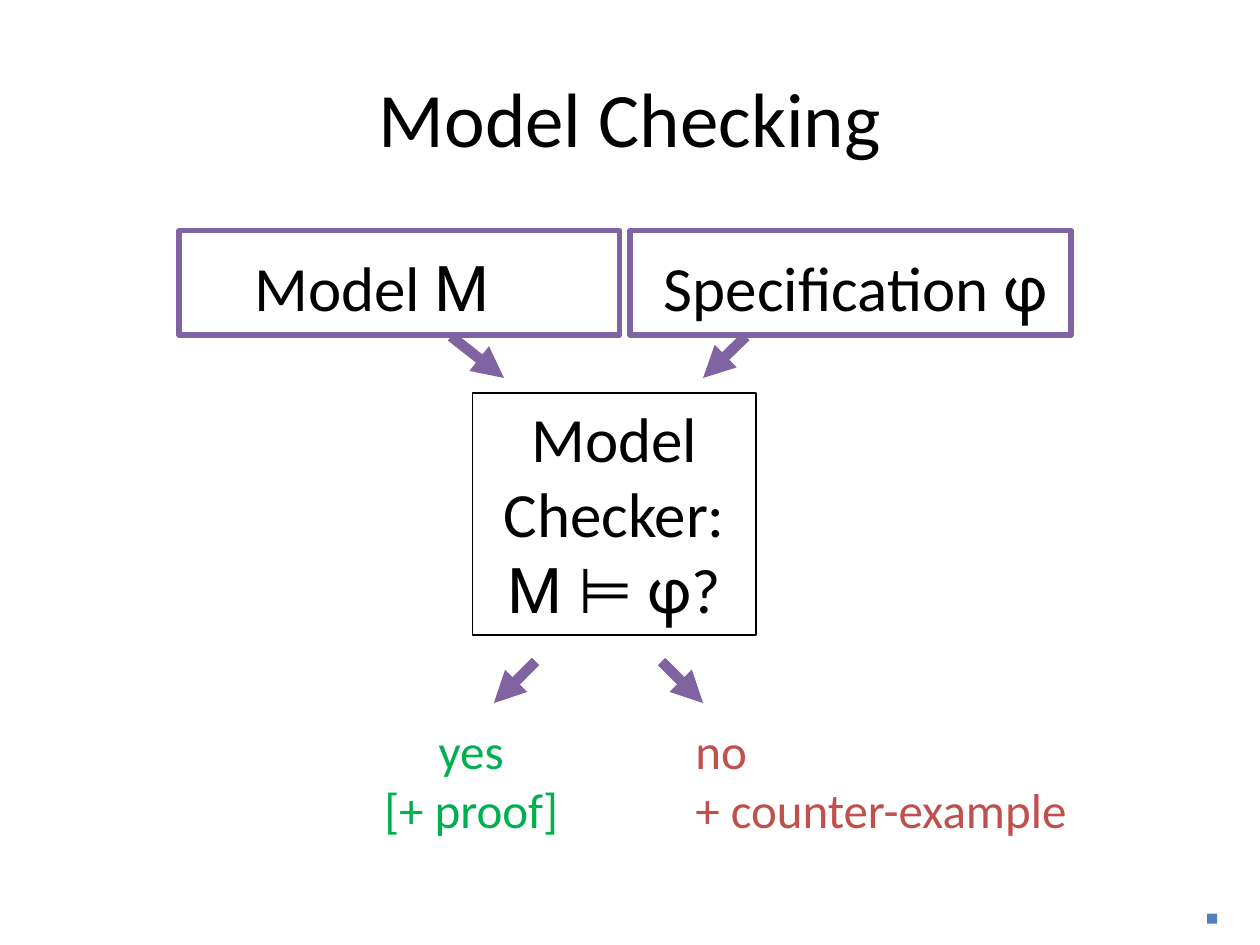
import pptx
import pptx.util
import pptx.oxml
import pptx.oxml.ns
import pptx.dml.color
import pptx.enum.shapes
import pptx.enum.text
from pptx.util import Inches

COLORS = {
    "black": "000000",
    "purple": "8064A2",
    "green": "00B050",
    "red": "C0504D",
    "blue": "4F81BD",
}
BODY_FONT = "Calibri"
SYMBOL_FONT = "Roboto"
SYMBOLS = ("M", "M ", "φ")
CENTER = pptx.enum.text.PP_ALIGN.CENTER
LEFT = pptx.enum.text.PP_ALIGN.LEFT


def rgb(name):
    return pptx.dml.color.RGBColor.from_string(COLORS[name])


class SlideBuilder:
    def __init__(self, presentation):
        self.slide = presentation.slides.add_slide(presentation.slide_layouts[5])

    def set_lines(self, text_frame, lines, size, color, alignment):
        for index, pieces in enumerate(lines):
            paragraph = text_frame.paragraphs[0] if index == 0 else text_frame.add_paragraph()
            paragraph.alignment = alignment
            for piece in pieces:
                run = paragraph.add_run()
                run.text = piece
                run.font.size = pptx.util.Pt(size)
                run.font.name = SYMBOL_FONT if piece in SYMBOLS else BODY_FONT
                run.font.color.rgb = rgb(color)

    def title(self, text, left, top, width, height):
        title = self.slide.shapes.title
        title.left, title.top = Inches(left), Inches(top)
        title.width, title.height = Inches(width), Inches(height)
        title.text_frame.vertical_anchor = pptx.enum.text.MSO_ANCHOR.MIDDLE
        self.set_lines(title.text_frame, [[text]], 44, "black", CENTER)

    def label(self, lines, left, top, width, height, size=36, color="black", alignment=LEFT):
        box = self.slide.shapes.add_textbox(
            Inches(left), Inches(top), Inches(width), Inches(height))
        box.text_frame.word_wrap = False
        self.set_lines(box.text_frame, lines, size, color, alignment)

    def rectangle(self, left, top, width, height, fill=None, line=None, weight=0.75):
        shape = self.slide.shapes.add_shape(
            pptx.enum.shapes.MSO_SHAPE.RECTANGLE,
            Inches(left), Inches(top), Inches(width), Inches(height))
        shape.shadow.inherit = False
        if fill:
            shape.fill.solid()
            shape.fill.fore_color.rgb = rgb(fill)
        else:
            shape.fill.background()
        if line:
            shape.line.color.rgb = rgb(line)
            shape.line.width = pptx.util.Pt(weight)
        else:
            shape.line.fill.background()
        return shape

    def text_rectangle(self, lines, left, top, width, height):
        shape = self.rectangle(left, top, width, height, line="black")
        shape.text_frame.word_wrap = True
        shape.text_frame.vertical_anchor = pptx.enum.text.MSO_ANCHOR.TOP
        self.set_lines(shape.text_frame, lines, 36, "black", CENTER)

    def arrow(self, start_x, start_y, end_x, end_y):
        connector = self.slide.shapes.add_connector(
            pptx.enum.shapes.MSO_CONNECTOR.STRAIGHT,
            Inches(start_x), Inches(start_y), Inches(end_x), Inches(end_y))
        connector.line.color.rgb = rgb("purple")
        connector.line.width = pptx.util.Pt(6)
        namespace = pptx.oxml.ns.nsdecls("a")
        properties = connector.element.spPr
        properties.get_or_add_ln().append(
            pptx.oxml.parse_xml(f'<a:tailEnd {namespace} type="triangle"/>'))
        properties.append(pptx.oxml.parse_xml(f"<a:effectLst {namespace}/>"))


def main():
    presentation = pptx.Presentation()
    presentation.slide_width = Inches(10)
    presentation.slide_height = Inches(7.5)

    builder = SlideBuilder(presentation)
    builder.title("Model Checking", 0.5, 0.3, 9, 1.25)

    builder.text_rectangle(
        [["Model"], ["Checker:"], ["M ", "⊨ ", "φ", "?"]], 3.75, 3.12, 2.25, 1.92)

    builder.label([["Model ", "M"]], 1.92, 1.92, 2.07, 0.71)
    builder.label([["Specification ", "φ"]], 5.17, 1.92, 3.25, 0.71)
    builder.label([["yes"], ["[+ proof]"]], 2.92, 5.67, 1.64, 1.03,
                  size=28, color="green", alignment=CENTER)
    builder.label([["no"], ["+ counter-example"]], 5.42, 5.67, 3.19, 1.04,
                  size=28, color="red")

    for input_left in (1.42, 5):
        builder.rectangle(input_left, 1.83, 3.5, 0.83, line="purple", weight=3)
    builder.rectangle(9.58, 7.25, 0.08, 0.08, fill="blue")

    for start_x, end_x in ((3.58, 4), (5.92, 5.58)):
        builder.arrow(start_x, 2.67, end_x, 3)
    for start_x, end_x in ((4.25, 3.92), (5.25, 5.58)):
        builder.arrow(start_x, 5.25, end_x, 5.58)

    presentation.save("out.pptx")


if __name__ == "__main__":
    main()
